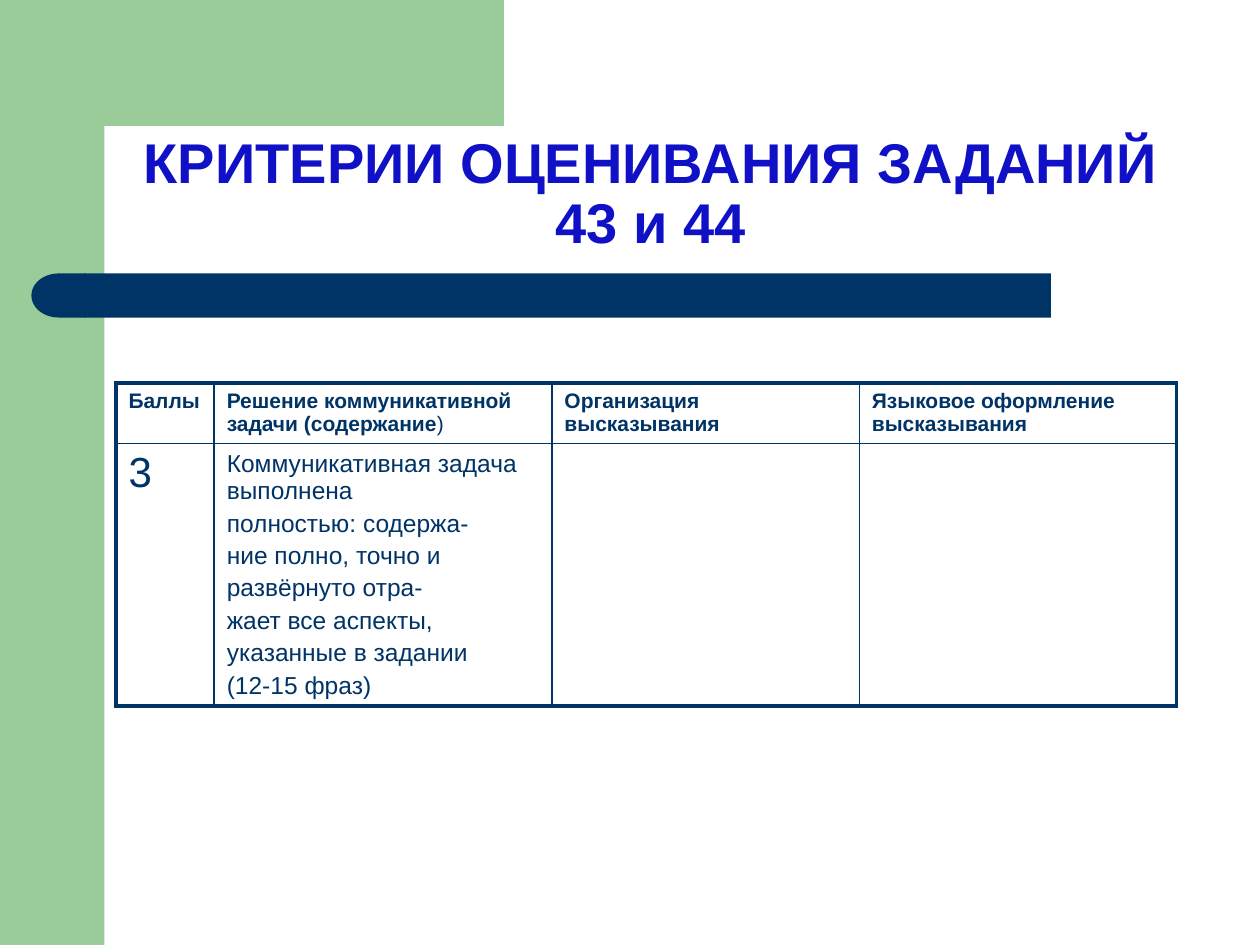
import math

import pptx
import pptx.dml.color
import pptx.enum.shapes
import pptx.enum.text
import pptx.oxml
import pptx.oxml.ns
import pptx.util
from pptx.util import Inches, Pt

COLORS = {"green": "99CC99", "navy": "003366", "title": "1010C6"}
FONT = "Arial"
SHAPES = pptx.enum.shapes.MSO_SHAPE

COLUMN_WIDTHS = [0.78, 2.68, 2.44, 2.52]
ROW_HEIGHTS = [0.48, 2.08]
HEADERS = [
    "Баллы",
    "Решение коммуникативной задачи (содержание",
    "Организация высказывания",
    "Языковое оформление высказывания",
]
CONTENT_CRITERIA = [
    "Коммуникативная задача выполнена",
    "полностью: содержа-",
    "ние полно, точно и",
    "развёрнуто отра-",
    "жает все аспекты,",
    "указанные в задании",
    "(12-15 фраз)",
]


def color(name):
    return pptx.dml.color.RGBColor.from_string(COLORS[name])


def paint(shape, fill):
    shape.shadow.inherit = False
    shape.fill.solid()
    shape.fill.fore_color.rgb = color(fill)
    shape.line.fill.background()


def add_block(slide, kind, left, top, width, height, fill):
    shape = slide.shapes.add_shape(
        kind, Inches(left), Inches(top), Inches(width), Inches(height))
    paint(shape, fill)
    return shape


def add_corner(slide):
    """Green top band whose inner corner is rounded."""
    center, radius, steps = 1.16, 0.33, 16
    arc = []
    for step in range(steps + 1):
        angle = math.pi / 2 * step / steps
        arc.append((center - radius * math.sin(angle),
                    center - radius * math.cos(angle)))
    points = [(3.5, 0.83), *arc, (0.83, 1.28), (0.5, 1.28), (0.5, 0)]
    builder = slide.shapes.build_freeform(3.5, 0, scale=Inches(1))
    builder.add_line_segments(points, close=True)
    paint(builder.convert_to_shape(), "green")


def set_font(font, size, color_name, bold):
    font.name = FONT
    font.size = Pt(size)
    font.bold = bold
    font.color.rgb = color(color_name)


def format_title(slide, text):
    title = slide.shapes.title
    title.left, title.top = Inches(0.83), Inches(0.83)
    title.width, title.height = Inches(8.67), Inches(1.25)
    frame = title.text_frame
    frame.text = text
    frame.word_wrap = True
    frame.auto_size = pptx.enum.text.MSO_AUTO_SIZE.NONE
    frame.vertical_anchor = pptx.enum.text.MSO_ANCHOR.BOTTOM
    paragraph = frame.paragraphs[0]
    paragraph.alignment = pptx.enum.text.PP_ALIGN.CENTER
    paragraph.line_spacing = 0.9
    set_font(paragraph.font, 32, "title", True)
    # Bring the title in front of the decoration
    title.element.getparent().append(title.element)


def set_border(cell, side, width):
    line = pptx.oxml.parse_xml(
        f'<a:{side} {pptx.oxml.ns.nsdecls("a")} w="{Pt(width)}">'
        f'<a:solidFill><a:srgbClr val="{COLORS["navy"]}"/></a:solidFill>'
        f'</a:{side}>')
    # Borders come before the fill in the cell properties
    properties = cell._tc.get_or_add_tcPr()
    position = len(properties.findall(pptx.oxml.ns.qn("a:lnL"))
                   + properties.findall(pptx.oxml.ns.qn("a:lnR"))
                   + properties.findall(pptx.oxml.ns.qn("a:lnT")))
    properties.insert(position, line)


def fill_cell(cell, lines, size, bold):
    cell.text = "\n".join(lines)
    for paragraph in cell.text_frame.paragraphs:
        paragraph.space_before = Pt(size * 0.2)
        set_font(paragraph.font, size, "navy", bold)


def add_criteria_table(slide):
    rows, columns = len(ROW_HEIGHTS), len(COLUMN_WIDTHS)
    frame = slide.shapes.add_table(
        rows, columns, Inches(0.92), Inches(3.04),
        Inches(sum(COLUMN_WIDTHS)), Inches(sum(ROW_HEIGHTS)))
    table = frame.table
    table.first_row = table.horz_banding = False
    for column, width in zip(table.columns, COLUMN_WIDTHS):
        column.width = Inches(width)
    for row, height in zip(table.rows, ROW_HEIGHTS):
        row.height = Inches(height)

    # Text
    for index, header in enumerate(HEADERS):
        fill_cell(table.cell(0, index), [header], 12, True)
    closing = table.cell(0, 1).text_frame.paragraphs[0].add_run()
    closing.text = ")"
    closing.font.bold = False
    fill_cell(table.cell(1, 0), ["3"], 24, False)
    fill_cell(table.cell(1, 1), CONTENT_CRITERIA, 14, False)

    # Thick outer frame, thin inner lines
    for row in range(rows):
        for column in range(columns):
            cell = table.cell(row, column)
            cell.fill.background()
            outer_sides = {"lnL": column == 0, "lnR": column == columns - 1,
                           "lnT": row == 0, "lnB": row == rows - 1}
            for side, outer in outer_sides.items():
                set_border(cell, side, 2.25 if outer else 1)


def main():
    presentation = pptx.Presentation()
    presentation.slide_width = Inches(10)
    presentation.slide_height = Inches(7.5)
    slide = presentation.slides.add_slide(presentation.slide_layouts[5])

    # Decoration
    add_block(slide, SHAPES.RECTANGLE, 0, 0, 0.83, 7.5, "green")
    add_corner(slide)
    bar = add_block(slide, SHAPES.ROUNDED_RECTANGLE, 0.67, 2.17, 7.67, 0.35, "navy")
    bar.adjustments[0] = 0
    cap = add_block(slide, SHAPES.FLOWCHART_DELAY, 0.25, 2.17, 0.43, 0.35, "navy")
    cap.element.spPr.xfrm.set("flipH", "1")

    # Content
    format_title(slide, "КРИТЕРИИ ОЦЕНИВАНИЯ ЗАДАНИЙ 43 и 44")
    add_criteria_table(slide)
    presentation.save("out.pptx")


if __name__ == "__main__":
    main()
